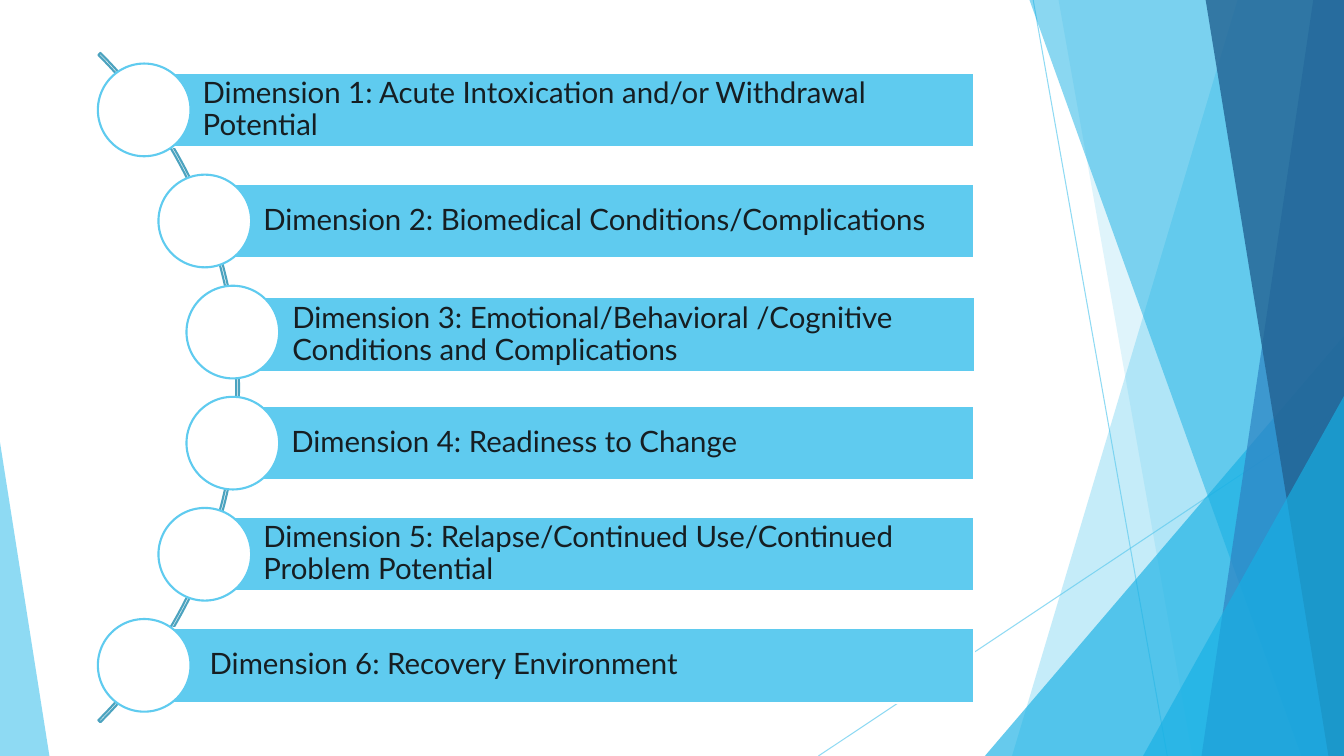
from typing import NamedTuple

from lxml import etree
from pptx import Presentation
from pptx.dml.color import RGBColor
from pptx.enum.shapes import MSO_CONNECTOR, MSO_SHAPE
from pptx.enum.text import MSO_ANCHOR, PP_ALIGN
from pptx.oxml.ns import qn
from pptx.util import Pt

STRAIGHT = MSO_CONNECTOR.STRAIGHT
TRIANGLE = MSO_SHAPE.ISOSCELES_TRIANGLE
BLOCK_ARC = MSO_SHAPE.BLOCK_ARC
RECTANGLE = MSO_SHAPE.RECTANGLE
OVAL = MSO_SHAPE.OVAL
MIDDLE = MSO_ANCHOR.MIDDLE
LEFT = PP_ALIGN.LEFT

COLORS = {
    "sky": "5FCBEF",
    "cyan": "17B0E4",
    "blue": "2E83C3",
    "navy": "226292",
    "arc": "4CA3BF",
    "text": "161E22",
    "white": "FFFFFF",
}
FONT = "Lato"
SLIDE_WIDTH, SLIDE_HEIGHT = 960, 540
FACET_TOP = -0.72

BAR_HEIGHT = 53.3
BAR_RIGHT = 695.5
CIRCLE_SIZE = 66.2
FIRST_CENTER = 78.5
ROW_STEP = 79.35
TEXT_INSET = 41.8
EDGE_INSET = 4.2
OUTLINE = 1.5


class Ray(NamedTuple):
    start: tuple[float, float]
    end: tuple[float, float]


class Facet(NamedTuple):
    """Panel reaching the right slide edge, with a slanted left side."""
    top_left: float
    bottom_left: float
    color: str
    opacity: int


class Wedge(NamedTuple):
    """Triangle standing on the bottom slide edge."""
    left: float
    top: float
    width: float
    apex: float
    color: str
    opacity: int


class Dimension(NamedTuple):
    label: str
    left: float
    nudge_x: float = 0
    nudge_y: float = 0
    indent: float = 0


RAYS = [Ray((738, 0), (833.8, 540)), Ray((960, 290), (584.6, 540))]
BACKDROP = [
    Facet(884.16, 722.88, "sky", 36),
    Facet(756, 851.76, "sky", 20),
    Wedge(703.5, 239.8, 256.5, 1, "cyan", 66),
    Facet(735.12, 929.52, "cyan", 50),
    Facet(938.16, 858.24, "blue", 70),
    Facet(861.12, 948.96, "navy", 80),
    Wedge(816.5, 283, 143.5, 1, "cyan", 66),
    Wedge(0, 316, 35.3, 0, "sky", 70),
]
DIMENSIONS = [
    Dimension("Dimension 1: Acute Intoxication and/or Withdrawal Potential", 103),
    Dimension("Dimension 2: Biomedical Conditions/Complications", 146.3),
    Dimension("Dimension 3: Emotional/Behavioral /Cognitive Conditions and Complications",
              166.3, nudge_x=0.7, nudge_y=1.85),
    Dimension("Dimension 4: Readiness to Change", 166.3),
    Dimension("Dimension 5: Relapse/Continued Use/Continued Problem Potential", 146.3),
    Dimension("Dimension 6: Recovery Environment", 103, indent=5),
]


def rgb(name: str) -> RGBColor:
    return RGBColor.from_string(COLORS[name])


def set_opacity(shape, percent: int) -> None:
    color = shape._element.spPr.find(".//" + qn("a:srgbClr"))
    etree.SubElement(color, qn("a:alpha")).set("val", str(percent * 1000))


def add_ray(page, ray: Ray) -> None:
    line = page.shapes.add_connector(STRAIGHT, *map(Pt, ray.start + ray.end))
    line.line.color.rgb = rgb("sky")
    line.line.width = Pt(0.75)
    set_opacity(line, 70)
    etree.SubElement(line._element.spPr, qn("a:effectLst"))


def add_panel(page, panel: Facet | Wedge) -> None:
    if isinstance(panel, Facet):
        builder = page.shapes.build_freeform(Pt(panel.top_left), Pt(FACET_TOP))
        corners = [(SLIDE_WIDTH, FACET_TOP), (SLIDE_WIDTH, SLIDE_HEIGHT),
                   (panel.bottom_left, SLIDE_HEIGHT)]
        builder.add_line_segments([(Pt(x), Pt(y)) for x, y in corners], close=True)
        shape = builder.convert_to_shape()
    else:
        shape = page.shapes.add_shape(TRIANGLE, Pt(panel.left), Pt(panel.top),
                                      Pt(panel.width), Pt(SLIDE_HEIGHT - panel.top))
        shape.adjustments[0] = panel.apex
    shape.shadow.inherit = False
    shape.fill.solid()
    shape.fill.fore_color.rgb = rgb(panel.color)
    shape.line.fill.background()
    set_opacity(shape, panel.opacity)


def add_outlined(page, kind: MSO_SHAPE, left: float, top: float, width: float,
                 height: float, line: str, fill: str | None = None):
    shape = page.shapes.add_shape(kind, Pt(left), Pt(top), Pt(width), Pt(height))
    shape.shadow.inherit = False
    if fill:
        shape.fill.solid()
        shape.fill.fore_color.rgb = rgb(fill)
    else:
        shape.fill.background()
    shape.line.color.rgb = rgb(line)
    shape.line.width = Pt(OUTLINE)
    return shape


def add_arc(page) -> None:
    arc = add_outlined(page, BLOCK_ARC, -505.4, -61.2, 676.1, 676.1, "arc")
    for index, value in enumerate((189, 27, 0.003)):
        arc.adjustments[index] = value


def add_dimension(page, dimension: Dimension, center: float) -> None:
    bar = add_outlined(page, RECTANGLE, dimension.left + dimension.nudge_x,
                       center - BAR_HEIGHT / 2 + dimension.nudge_y,
                       BAR_RIGHT - dimension.left, BAR_HEIGHT, "white", "sky")
    frame = bar.text_frame
    frame.word_wrap = True
    frame.vertical_anchor = MIDDLE
    frame.margin_left = Pt(TEXT_INSET + dimension.indent)
    frame.margin_top = frame.margin_right = frame.margin_bottom = Pt(EDGE_INSET)
    para = frame.paragraphs[0]
    para.text = dimension.label
    para.alignment = LEFT
    para.line_spacing = 0.9
    para.font.name = FONT
    para.font.size = Pt(21)
    para.font.color.rgb = rgb("text")
    radius = CIRCLE_SIZE / 2
    add_outlined(page, OVAL, dimension.left - radius, center - radius,
                 CIRCLE_SIZE, CIRCLE_SIZE, "sky", "white")


def main() -> None:
    deck = Presentation()
    deck.slide_width, deck.slide_height = Pt(SLIDE_WIDTH), Pt(SLIDE_HEIGHT)
    page = deck.slides.add_slide(deck.slide_layouts[6])
    for ray in RAYS:
        add_ray(page, ray)
    for panel in BACKDROP:
        add_panel(page, panel)
    add_arc(page)
    for row, dimension in enumerate(DIMENSIONS):
        add_dimension(page, dimension, FIRST_CENTER + row * ROW_STEP)
    deck.save("out.pptx")


if __name__ == "__main__":
    main()
